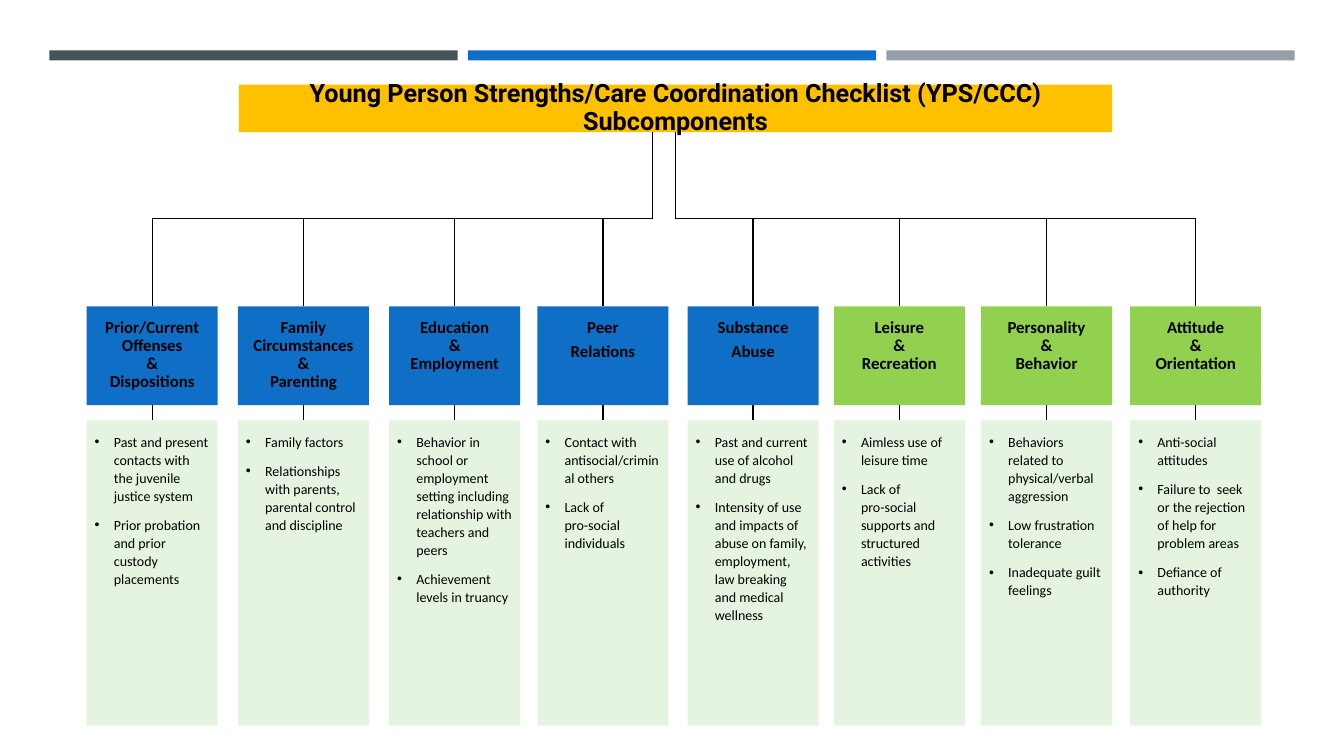
from dataclasses import dataclass

from lxml.etree import SubElement
from pptx import Presentation
from pptx.dml.color import RGBColor
from pptx.enum.shapes import MSO_CONNECTOR as CONN, MSO_SHAPE as SHAPE
from pptx.enum.text import MSO_ANCHOR as ANCHOR, MSO_AUTO_SIZE as FIT, PP_ALIGN as ALIGN
from pptx.oxml.ns import qn
from pptx.util import Inches, Pt

TITLE = "Young Person Strengths/Care Coordination Checklist (YPS/CCC) Subcomponents"
COLUMNS = [
    (0.86, "blue", 0, ["Prior/Current Offenses", "&", "Dispositions"],
     ["Past and present contacts with the juvenile justice system",
      "Prior probation and prior custody placements"]),
    (2.36, "blue", 0, ["Family Circumstances", "&", "Parenting"],
     ["Family factors",
      "Relationships with parents, parental control and discipline"]),
    (3.86, "blue", 0, ["Education", "&", "Employment"],
     ["Behavior in school or employment setting including relationship with teachers and peers",
      "Achievement levels in truancy"]),
    (5.33, "blue", 4.2, ["Peer", "Relations"],
     ["Contact with antisocial/criminal others",
      "Lack of\vpro-social individuals"]),
    (6.82, "blue", 4.2, ["Substance", "Abuse"],
     ["Past and current use of alcohol and drugs",
      "Intensity of use and impacts of abuse on family, employment, law breaking "
      "and medical wellness"]),
    (8.27, "green", 0, ["Leisure", "&", "Recreation"],
     ["Aimless use of leisure time",
      "Lack of\vpro-social supports and structured activities"]),
    (9.73, "green", 0, ["Personality", "&", "Behavior"],
     ["Behaviors related to physical/verbal aggression",
      "Low frustration tolerance",
      "Inadequate guilt feelings"]),
    (11.21, "green", 0, ["Attitude", "&", "Orientation"],
     ["Anti-social attitudes",
      "Failure to  seek or the rejection of help for problem areas",
      "Defiance of authority"]),
]


@dataclass(frozen=True)
class Theme:
    slate: str = "465359"
    blue: str = "0F6FC6"
    gray: str = "969FA7"
    gold: str = "FFC000"
    green: str = "92D050"
    mint: str = "E5F4E0"
    ink: str = "000000"
    title_font: str = "Roboto"
    body_font: str = "Calibri"
    title_size: float = 18
    head_size: float = 12
    list_size: float = 10
    line_width: float = 1


THEME = Theme()
BAR_LEFT, BAR_TOP, BAR_W, BAR_H, BAR_STEP = 0.49, 0.5, 4.05, 0.1, 4.15
TITLE_BOX = (2.37, 0.84, 8.66, 0.47)
TITLE_BOTTOM, BUS_Y = 1.31, 2.17
STEMS = (6.47, 6.7)
COL_W, HEAD_TOP, HEAD_H, CARD_TOP, CARD_H = 1.3, 3.04, 0.98, 4.17, 3.03
INSETS = (0.08, 0.12, 0.08, 0)
INDENT = 0.19


def add_box(slide, left, top, width, height, color):
    s = slide.shapes.add_shape(SHAPE.RECTANGLE, *map(Inches, (left, top, width, height)))
    s.shadow.inherit = False
    s.fill.solid()
    s.fill.fore_color.rgb = RGBColor.from_string(color)
    s.line.fill.background()
    return s


def add_line(slide, x1, y1, x2, y2):
    c = slide.shapes.add_connector(CONN.STRAIGHT, *map(Inches, (x1, y1, x2, y2)))
    c.line.color.rgb = RGBColor.from_string(THEME.ink)
    c.line.width = Pt(THEME.line_width)
    SubElement(c._element.spPr, qn("a:effectLst"))
    return c


def write(tf, lines, *, size, font=THEME.body_font, bold=False, align=ALIGN.LEFT,
          spacing=0.9, after=0, bullet=False, insets=INSETS, anchor=ANCHOR.TOP):
    tf.word_wrap = True
    tf.auto_size = FIT.NONE
    tf.vertical_anchor = anchor
    tf.margin_left, tf.margin_top, tf.margin_right, tf.margin_bottom = map(Inches, insets)
    for i, line in enumerate(lines):
        p = tf.add_paragraph() if i else tf.paragraphs[0]
        p.text = line
        p.alignment = align
        p.line_spacing = spacing
        p.space_before, p.space_after = Pt(0), Pt(after)
        if bullet:
            pPr = p._p.get_or_add_pPr()
            pPr.set("marL", str(Inches(INDENT)))
            pPr.set("indent", str(-Inches(INDENT)))
            SubElement(pPr, qn("a:buFont"), typeface="Arial")
            SubElement(pPr, qn("a:buChar"), char="•")
        for br in p._p.findall(qn("a:br")):
            SubElement(br, qn("a:rPr"), sz=str(size * 100))
        for r in p.runs:
            r.font.name, r.font.size, r.font.bold = font, Pt(size), bold
            r.font.color.rgb = RGBColor.from_string(THEME.ink)


def add_column(slide, left, color, after, heading, items):
    head = add_box(slide, left, HEAD_TOP, COL_W, HEAD_H, color)
    write(head.text_frame, heading, size=THEME.head_size, bold=True,
          align=ALIGN.CENTER, after=after)
    card = add_box(slide, left, CARD_TOP, COL_W, CARD_H, THEME.mint)
    write(card.text_frame, items, size=THEME.list_size, spacing=1.07, after=8, bullet=True)
    center = left + COL_W / 2
    drop = add_line(slide, center, BUS_Y, center, HEAD_TOP)
    drop.end_connect(head, 0)
    link = add_line(slide, center, HEAD_TOP + HEAD_H, center, CARD_TOP)
    link.begin_connect(head, 2)
    link.end_connect(card, 0)


def main():
    prs = Presentation()
    prs.slide_width, prs.slide_height = Inches(13.33), Inches(7.5)
    slide = prs.slides.add_slide(prs.slide_layouts[5])

    for i, color in enumerate((THEME.slate, THEME.blue, THEME.gray)):
        add_box(slide, BAR_LEFT + i * BAR_STEP, BAR_TOP, BAR_W, BAR_H, color)

    title = slide.shapes.title
    title.left, title.top, title.width, title.height = map(Inches, TITLE_BOX)
    title.fill.solid()
    title.fill.fore_color.rgb = RGBColor.from_string(THEME.gold)
    write(title.text_frame, [TITLE], size=THEME.title_size, font=THEME.title_font,
          bold=True, align=ALIGN.CENTER, insets=(0.01,) * 4, anchor=ANCHOR.MIDDLE)

    for left, color, after, heading, items in COLUMNS:
        add_column(slide, left, getattr(THEME, color), after, heading, items)

    for stem, outer in zip(STEMS, (COLUMNS[0], COLUMNS[-1])):
        add_line(slide, stem, TITLE_BOTTOM, stem, BUS_Y)
        add_line(slide, stem, BUS_Y, outer[0] + COL_W / 2, BUS_Y)

    prs.save("out.pptx")


if __name__ == "__main__":
    main()
